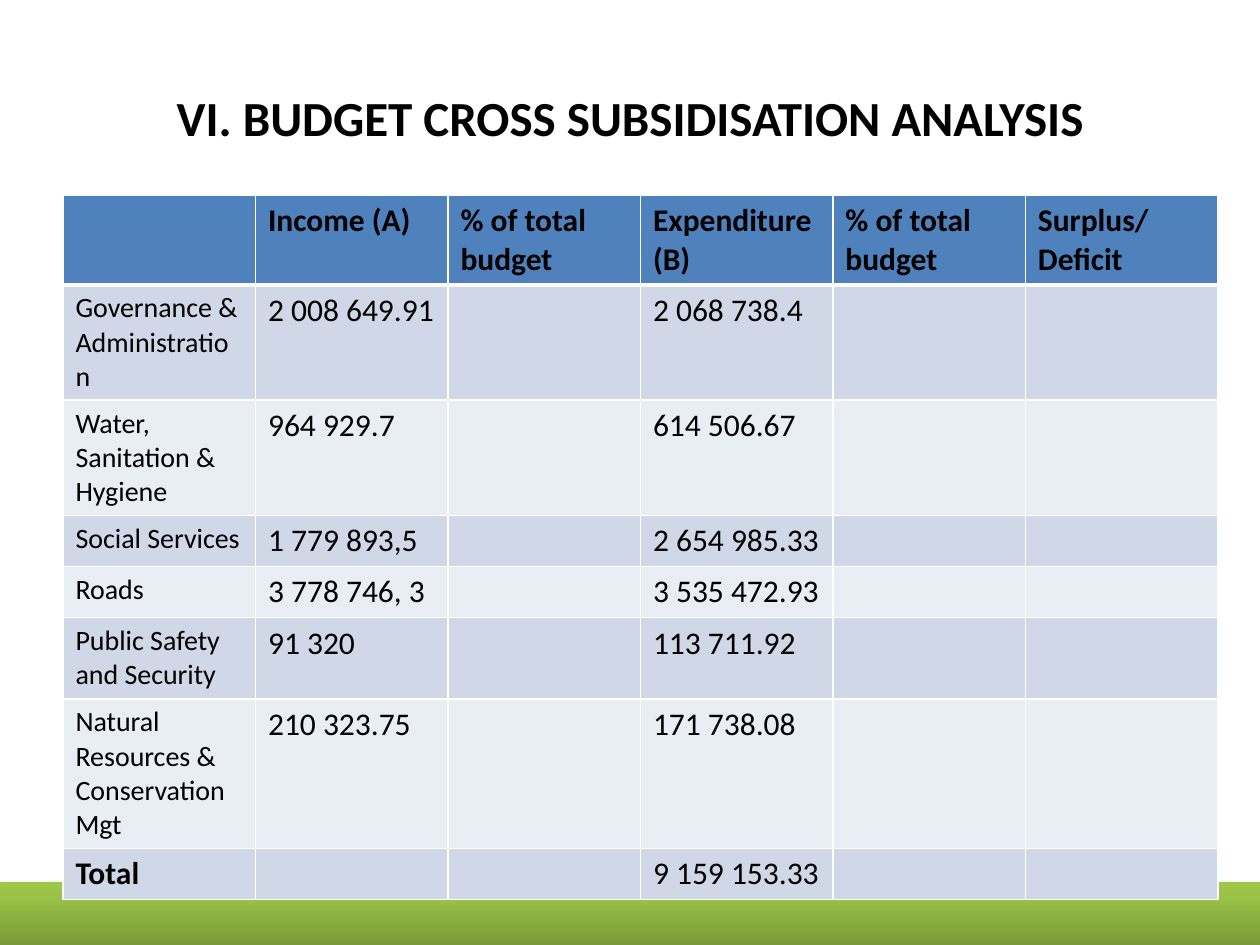
from pptx import Presentation, util as u
from pptx.dml.color import RGBColor
from pptx.enum import shapes, text
from pptx.oxml import parse_xml
from pptx.oxml.ns import nsdecls

HEAD = ["", "Income (A)", "% of total budget", "Expenditure (B)",
        "% of total budget", "Surplus/Deficit"]
BUDGET = [
    ("Governance & Administration", "2 008 649.91", "2 068 738.4", 0.61),
    ("Water, Sanitation & Hygiene", "964 929.7", "614 506.67", 0.87),
    ("Social Services", "1 779 893,5", "2 654 985.33", 0.38),
    ("Roads", "3 778 746, 3", "3 535 472.93", 0.38),
    ("Public Safety and Security", "91 320", "113 711.92", 0.61),
    ("Natural Resources & Conservation Mgt", "210 323.75", "171 738.08", 1.12),
    ("Total", "", "9 159 153.33", 0.38),
]


def rgb(code):
    return RGBColor.from_string(code)


def write(frame, words, size=18, bold=False, align=None, color="000000", font="Calibri"):
    para = frame.paragraphs[0]
    para.alignment = align
    if words:
        run = para.add_run()
        run.text = words
        style = run.font
    else:
        style = para.font
    style.name, style.size, style.bold = font, u.Pt(size), bold
    style.color.rgb = rgb(color)


def edge(cell, **widths):
    """Draw white borders; widths in points, by side in the order L, R, T, B."""
    props = cell._tc.get_or_add_tcPr()
    for spot, (side, width) in enumerate(widths.items()):
        props.insert(spot, parse_xml(
            f'<a:ln{side} {nsdecls("a")} w="{u.Pt(width)}"><a:solidFill>'
            f'<a:srgbClr val="FFFFFF"/></a:solidFill></a:ln{side}>'))


class Deck:
    head, bands = "4F81BD", ("D0D8E8", "E9EDF4")

    def __init__(self, wide=10, high=7.5):
        self.prs = Presentation()
        self.prs.slide_width, self.prs.slide_height = u.Inches(wide), u.Inches(high)
        self.slide = self.prs.slides.add_slide(self.prs.slide_layouts[5])

    def area(self, left, top, width, height):
        """Turn shares of the slide's size into lengths."""
        wide, high = self.prs.slide_width, self.prs.slide_height
        return [u.Emu(round(share * full)) for share, full in
                zip((left, top, width, height), (wide, high, wide, high))]

    def title(self, words, *place):
        shape = self.slide.shapes.title
        shape.left, shape.top, shape.width, shape.height = self.area(*place)
        shape.text_frame.vertical_anchor = text.MSO_ANCHOR.MIDDLE
        write(shape.text_frame, words, size=28, bold=True, align=text.PP_ALIGN.CENTER)

    def strip(self, stops, *place):
        """Add a bar whose gradient runs upward, with a soft shadow."""
        bar = self.slide.shapes.add_shape(shapes.MSO_SHAPE.RECTANGLE, *self.area(*place))
        bar.line.fill.background()
        bar.shadow.inherit = False
        marks = "".join(f'<a:gs pos="{pos * 1000}"><a:srgbClr val="{code}"/></a:gs>'
                        for pos, code in stops)
        props = bar._element.spPr
        props.insert(2, parse_xml(
            f'<a:gradFill {nsdecls("a")} rotWithShape="1"><a:gsLst>{marks}</a:gsLst>'
            '<a:lin ang="16200000" scaled="0"/></a:gradFill>'))
        props.effectLst.append(parse_xml(
            f'<a:outerShdw {nsdecls("a")} blurRad="{u.Pt(3.1)}" dist="{u.Pt(1.8)}" '
            'dir="5400000" rotWithShape="0"><a:srgbClr val="000000">'
            '<a:alpha val="35000"/></a:srgbClr></a:outerShdw>'))

    def cell(self, cell, words, fill, base=1, **form):
        cell.fill.solid()
        cell.fill.fore_color.rgb = rgb(fill)
        edge(cell, L=1, R=1, T=1, B=base)
        write(cell.text_frame, words, **form)

    def table(self, head, rows, *place):
        grid = self.slide.shapes.add_table(
            len(rows) + 1, len(head), *self.area(*place)).table
        grid.rows[0].height = u.Inches(0.67)
        for col, words in enumerate(head):
            self.cell(grid.cell(0, col), words, self.head, base=3, bold=True)
        for row, (name, income, spent, high) in enumerate(rows, 1):
            grid.rows[row].height = u.Inches(high)
            total = name == "Total"
            for col, words in enumerate((name, income, "", spent, "", "")):
                label = col == 0
                self.cell(grid.cell(row, col), words, self.bands[(row - 1) % 2],
                          size=16 if label and not total else 18,
                          bold=label and total)


def main():
    deck = Deck()
    deck.title("VI. BUDGET CROSS SUBSIDISATION ANALYSIS", 0.05, 0.04, 0.9, 1 / 6)
    deck.strip([(0, "779737"), (80, "9BC348"), (100, "9DC746")], 0, 14 / 15, 1.02, 0.07)
    deck.table(HEAD, BUDGET, 0.05, 1.55 / 7.5, 11 / 12, 0.67)
    deck.prs.save("out.pptx")


if __name__ == "__main__":
    main()
